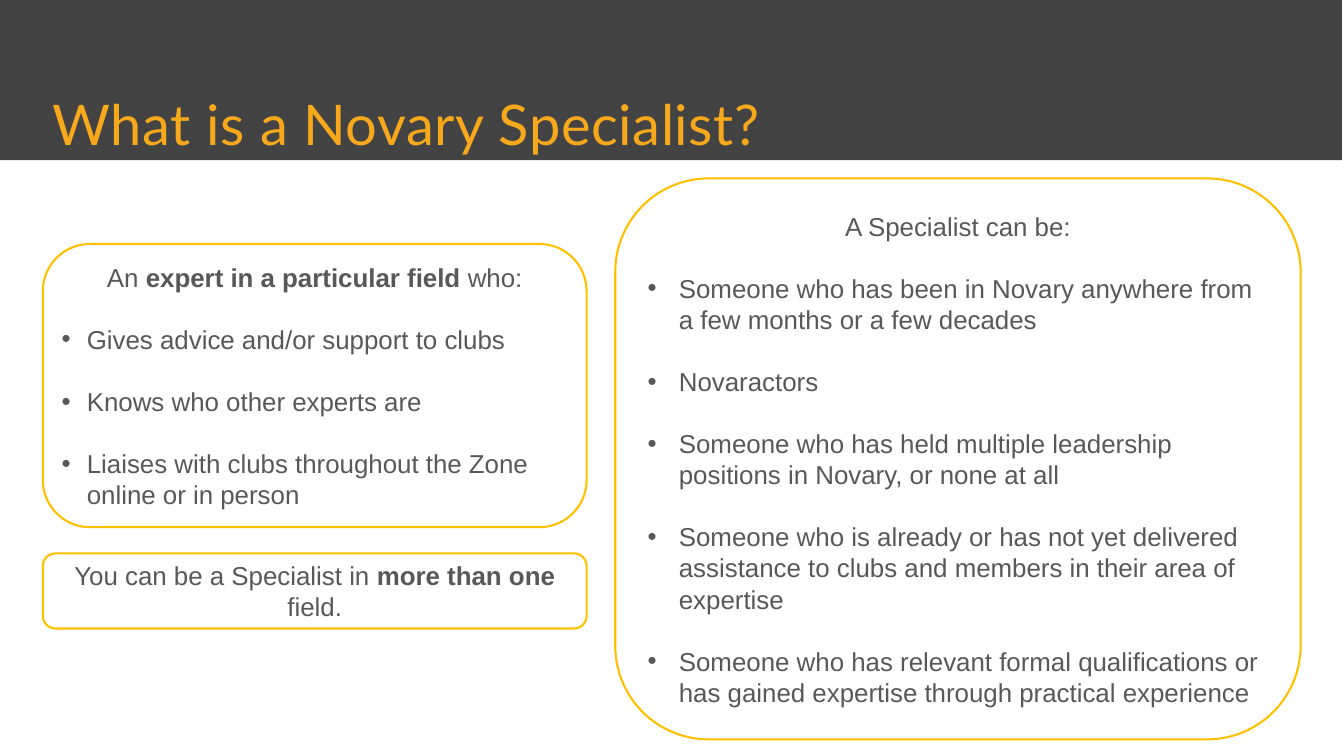
import dataclasses

import pptx
import pptx.dml.color
import pptx.enum.shapes
import pptx.enum.text
import pptx.oxml.ns
import pptx.util
from lxml import etree
from pptx.util import Inches, Pt

ALIGN = pptx.enum.text.PP_ALIGN
ANCHOR = pptx.enum.text.MSO_ANCHOR
SHAPE = pptx.enum.shapes.MSO_SHAPE


@dataclasses.dataclass(frozen=True)
class Theme:
    band: str = "434343"
    title: str = "F7A81B"
    outline: str = "FFC000"
    text: str = "58585A"
    title_font: str = "Lato"
    body_font: str = "Arial"
    title_size: float = 80
    body_size: float = 37
    line_height: float = 44.4
    outline_width: float = 3


THEME = Theme()


def rgb(value):
    return pptx.dml.color.RGBColor.from_string(value)


def set_font(font, name, size, color):
    font.name = name
    font.size = Pt(size)
    font.color.rgb = rgb(color)


def set_indent(para, left, first=0):
    properties = para._p.get_or_add_pPr()
    properties.set("marL", str(Inches(left)))
    properties.set("indent", str(Inches(first)))
    return properties


def add_header(page, left, top, width, height, title_height):
    """Dark band with the title along its lower edge."""
    band = page.shapes.add_shape(SHAPE.RECTANGLE, Inches(left), Inches(top),
                                 Inches(width), Inches(height))
    band.shadow.inherit = False
    band.fill.solid()
    band.fill.fore_color.rgb = rgb(THEME.band)
    band.line.fill.background()

    title = page.shapes.title
    title.element.addprevious(band.element)  # the band lies behind the title
    title.left, title.top = Inches(left + 0.02), Inches(top + height - title_height)
    title.width, title.height = Inches(width - 0.04), Inches(title_height)
    frame = title.text_frame
    frame.text = "What is a Novary Specialist?"
    frame.auto_size = pptx.enum.text.MSO_AUTO_SIZE.NONE
    frame.vertical_anchor = ANCHOR.MIDDLE
    frame.margin_left = frame.margin_right = Inches(0.06)
    frame.margin_top = frame.margin_bottom = Inches(0.06)
    para = frame.paragraphs[0]
    para.alignment = ALIGN.LEFT
    set_indent(para, 1)
    span = para.runs[0]
    set_font(span.font, THEME.title_font, THEME.title_size, THEME.title)
    span._r.get_or_add_rPr().set("spc", "90")


def add_card(page, left, top, width, height, heading, bullets=(), indent=0.5):
    """Outlined card: a centred heading of (text, bold) spans, then bullets."""
    card = page.shapes.add_shape(SHAPE.ROUNDED_RECTANGLE, Inches(left), Inches(top),
                                 Inches(width), Inches(height))
    card.shadow.inherit = False
    card.fill.background()
    card.line.color.rgb = rgb(THEME.outline)
    card.line.width = Pt(THEME.outline_width)
    frame = card.text_frame
    frame.word_wrap = True
    frame.vertical_anchor = ANCHOR.MIDDLE

    para = frame.paragraphs[0]
    para.alignment = ALIGN.CENTER
    for text, bold in heading:
        span = para.add_run()
        span.text = text
        span.font.bold = bold

    for text in bullets:
        para = frame.add_paragraph()
        para.text = text
        para.alignment = ALIGN.LEFT
        para.space_before = Pt(THEME.line_height)
        properties = set_indent(para, indent, -indent)
        font = etree.SubElement(properties, pptx.oxml.ns.qn("a:buFont"))
        font.set("typeface", THEME.body_font)
        bullet = etree.SubElement(properties, pptx.oxml.ns.qn("a:buChar"))
        bullet.set("char", "•")

    for para in frame.paragraphs:
        para.line_spacing = Pt(THEME.line_height)
        for span in para.runs:
            set_font(span.font, THEME.body_font, THEME.body_size, THEME.text)


def main():
    deck = pptx.Presentation()
    deck.slide_width, deck.slide_height = Inches(26.67), Inches(15)
    page = deck.slides.add_slide(deck.slide_layouts.get_by_name("Title Only"))

    add_header(page, -0.04, 0, 26.67, 3.18, title_height=1.46)

    # Right: who can be a specialist
    add_card(page, 12.21, 3.54, 13.6, 11.13,
             [("A Specialist can be:", False)],
             ["Someone who has been in Novary anywhere from a few months or a few decades",
              "Novaractors",
              "Someone who has held multiple leadership positions in Novary, or none at all",
              "Someone who is already or has not yet delivered assistance to clubs and "
              "members in their area of expertise",
              "Someone who has relevant formal qualifications or has gained expertise "
              "through practical experience"],
             indent=0.62)

    # Left: definition, with a remark below it
    left, width = 0.85, 10.79
    add_card(page, left, 4.84, width, 5.62,
             [("An ", False), ("expert in a particular field", True), (" who:", False)],
             ["Gives advice and/or support to clubs",
              "Knows who other experts are",
              "Liaises with clubs throughout the Zone online or in person"])
    add_card(page, left, 10.98, width, 1.49,
             [("You can be a Specialist in ", False), ("more than one", True),
              (" field.", False)])

    deck.save("out.pptx")


if __name__ == "__main__":
    main()
